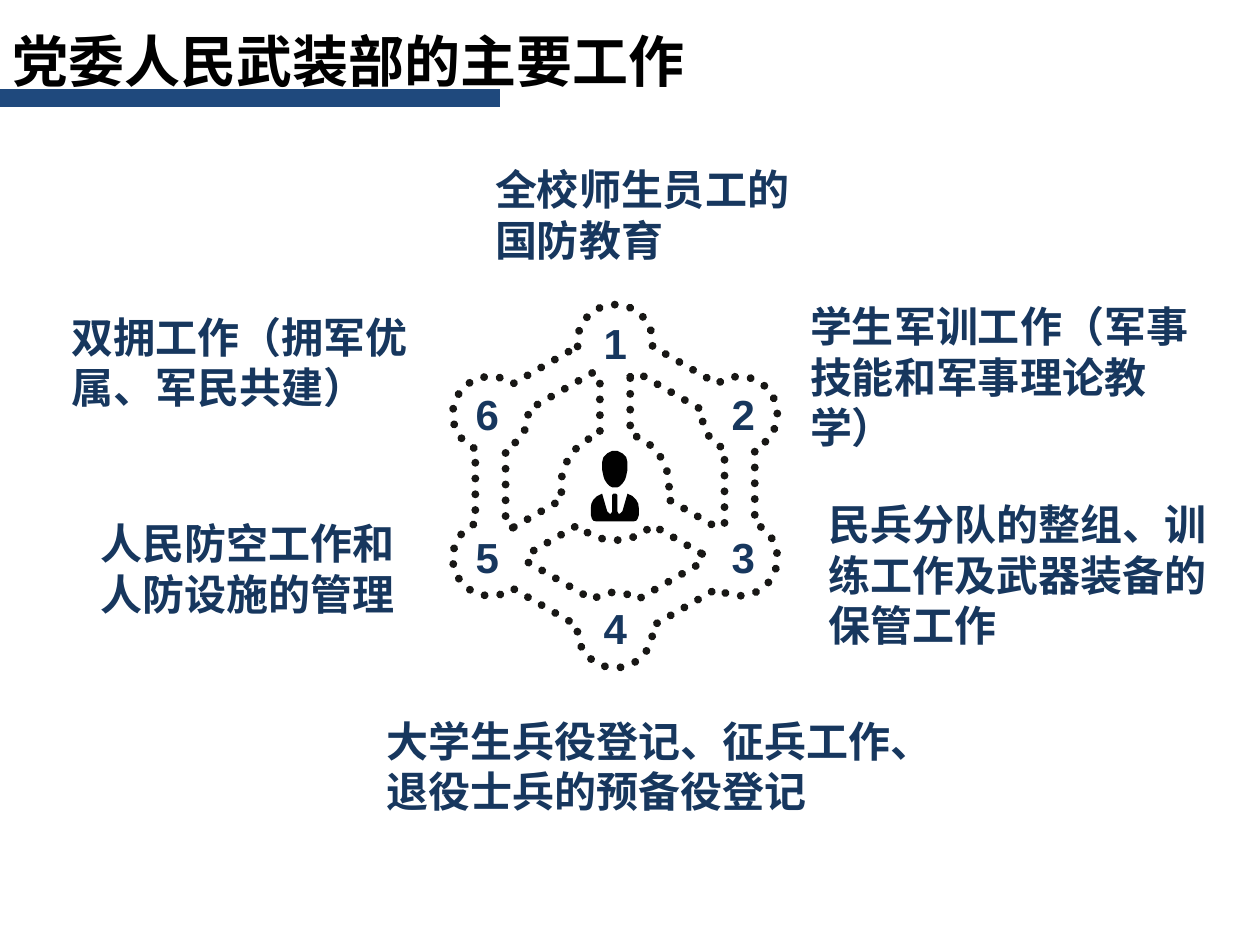
from math import asin, cos, degrees, radians, sin

from lxml import etree
from pptx import Presentation
from pptx.dml.color import RGBColor
from pptx.enum.dml import MSO_LINE
from pptx.enum.shapes import MSO_CONNECTOR
from pptx.enum.text import MSO_ANCHOR, MSO_AUTO_SIZE, PP_ALIGN
from pptx.oxml.ns import qn
from pptx.util import Cm, Pt

STRAIGHT = MSO_CONNECTOR.STRAIGHT
ROUND_DOT = MSO_LINE.ROUND_DOT
TOP = MSO_ANCHOR.TOP
FIT_SHAPE = MSO_AUTO_SIZE.SHAPE_TO_FIT_TEXT
LEFT = PP_ALIGN.LEFT

CJK, LATIN = "Noto Sans CJK SC", "Arial"
NAVY, BLUE, BLACK, DOTS, PERSON = "17375E", "1F497D", "000000", "181715", "010101"

TITLE = "党委人民武装部的主要工作"
DUTIES = [
    ("全校师生员工的国防教育", (9.73, 3.18, 6.55, 2.31)),
    ("学生军训工作（军事技能和军事理论教学）", (16.08, 5.94, 8.2, 2.31)),
    ("民兵分队的整组、训练工作及武器装备的保管工作", (16.46, 9.93, 8.15, 3.33)),
    ("大学生兵役登记、征兵工作、退役士兵的预备役登记", (7.54, 14.3, 10.72, 2.31)),
    ("人民防空工作和人防设施的管理", (1.78, 10.31, 6.55, 2.31)),
    ("双拥工作（拥军优属、军民共建）", (1.19, 6.15, 7.75, 2.31)),
]

NODE_ANGLES = [60 * step - 90 for step in range(6)]
RING, NODE, HUB, HALF_PATH = 2.9, 0.76, 1.09, 0.305
NODE_GAP = degrees(asin(HALF_PATH / NODE))
HUB_GAP = degrees(asin(HALF_PATH / HUB))

HEAD = [(0, 0), (2, 0), (4, 1), (6, 2), (7, 3), (9, 5), (9.5, 7), (10, 9), (10, 12),
        (10, 15), (9, 20), (8, 23), (6, 26), (4, 28), (2, 29), (0, 29)]
SUIT = [(0, 34), (1, 34), (2, 35), (2, 48), (3, 50), (4, 50), (6, 48), (10, 34),
        (14, 36), (17, 39), (18.5, 42), (19, 46), (19, 51), (18, 54), (17, 55.5),
        (15, 56), (0, 56)]


def color(hex_string):
    """Turn a hex string into a colour."""
    return RGBColor.from_string(hex_string)


def polar(center, radius, angle):
    """Return the point at an angle in degrees, clockwise from the right."""
    x, y = center
    return x + radius * cos(radians(angle)), y + radius * sin(radians(angle))


def arc(center, radius, start, end):
    """Return points along a circular arc, about five degrees apart."""
    steps = max(1, round(abs(end - start) / 5))
    return [polar(center, radius, start + (end - start) * i / steps)
            for i in range(steps + 1)]


def write(shape, wording, font_name, size, hex_color):
    """Put one left-aligned bold paragraph into a text shape."""
    frame = shape.text_frame
    for name, value in {"word_wrap": True, "auto_size": FIT_SHAPE,
                        "vertical_anchor": TOP}.items():
        setattr(frame, name, value)
    paragraph = frame.paragraphs[0]
    paragraph.alignment = LEFT
    run = paragraph.add_run()
    run.text = wording
    for name, value in {"name": font_name, "size": Pt(size), "bold": True}.items():
        setattr(run.font, name, value)
    run.font.color.rgb = color(hex_color)
    east_asian = etree.SubElement(run.font._element, qn("a:ea"))
    east_asian.set("typeface", font_name)


def add_label(slide, box, wording, font_name=CJK):
    """Add a navy text box."""
    label = slide.shapes.add_textbox(*map(Cm, box))
    write(label, wording, font_name, 24, NAVY)


def add_outline(slide, contours):
    """Add one freeform made of closed contours given in centimetres."""
    contours = [[(Cm(x), Cm(y)) for x, y in contour] for contour in contours]
    builder = slide.shapes.build_freeform(*contours[0][0])
    for index, (start, *rest) in enumerate(contours):
        if index:
            builder.move_to(*start)
        builder.add_line_segments(rest, close=True)
    outline = builder.convert_to_shape()
    outline.shadow.inherit = False
    return outline


def add_heading(slide, box):
    """Add the underlined slide title."""
    left, top, width, height = box
    bar_y = Cm(top + 1.57)
    underline = slide.shapes.add_connector(STRAIGHT, Cm(left), bar_y, Cm(left + 10.08), bar_y)
    underline.line.width = Pt(10)
    underline.line.color.rgb = color(BLUE)
    etree.SubElement(underline._element.spPr, qn("a:effectLst"))
    title = slide.shapes.title
    for name, value in zip(("left", "top", "width", "height"), box):
        setattr(title, name, Cm(value))
    write(title, TITLE, CJK, 32, BLACK)


def add_network(slide, center):
    """Add the dotted ring of six nodes with three spokes to its hub."""
    rim = []
    for angle in NODE_ANGLES:
        node = polar(center, RING, angle)
        rim += arc(node, NODE, angle - 120 + NODE_GAP, angle + 120 - NODE_GAP)
    contours = [rim]
    for angle in NODE_ANGLES[::2]:
        first, middle, last = (polar(center, RING, angle + turn) for turn in (0, 60, 120))
        contours.append(
            arc(first, NODE, angle + 180 - NODE_GAP, angle + 120 + NODE_GAP)
            + arc(middle, NODE, angle + 300 - NODE_GAP, angle + 180 + NODE_GAP)
            + arc(last, NODE, angle + 360 - NODE_GAP, angle + 300 + NODE_GAP)
            + arc(center, HUB, angle + 120 - HUB_GAP, angle + HUB_GAP))
    network = add_outline(slide, contours)
    network.fill.background()
    network.line.width = Pt(4.5)
    network.line.color.rgb = color(DOTS)
    network.line.dash_style = ROUND_DOT
    network.line._get_or_add_ln().set("cap", "rnd")


def add_person(slide, box):
    """Add the symmetric figure of a person in a suit."""
    left, top, width, height = box
    contours = []
    for half in (HEAD, SUIT):
        whole = half + [(-x, y) for x, y in reversed(half) if x]
        contours.append([(left + width * (x + 19) / 38, top + height * y / 56)
                         for x, y in whole])
    person = add_outline(slide, contours)
    person.fill.solid()
    person.fill.fore_color.rgb = color(PERSON)
    person.line.fill.background()


def add_numbers(slide, center):
    """Number the six nodes clockwise from the top."""
    x, y = center
    for number, angle in enumerate(NODE_ANGLES, 1):
        left = x - 0.48 + 2.98 * cos(radians(angle))
        top = y - 0.65 + 2.88 * sin(radians(angle))
        add_label(slide, (left, top, 1.22, 1.27), str(number), LATIN)


def main():
    """Build and save the slide."""
    deck = Presentation()
    deck.slide_width, deck.slide_height = Cm(25.4), Cm(19.05)
    slide = deck.slides.add_slide(deck.slide_layouts[5])
    center = 12.4, 9.8
    add_heading(slide, (0, 0.41, 18.64, 1.63))
    add_network(slide, center)
    add_person(slide, (11.91, 9.09, 0.97, 1.42))
    add_numbers(slide, center)
    for wording, box in DUTIES:
        add_label(slide, box, wording)
    deck.save("out.pptx")


if __name__ == "__main__":
    main()
